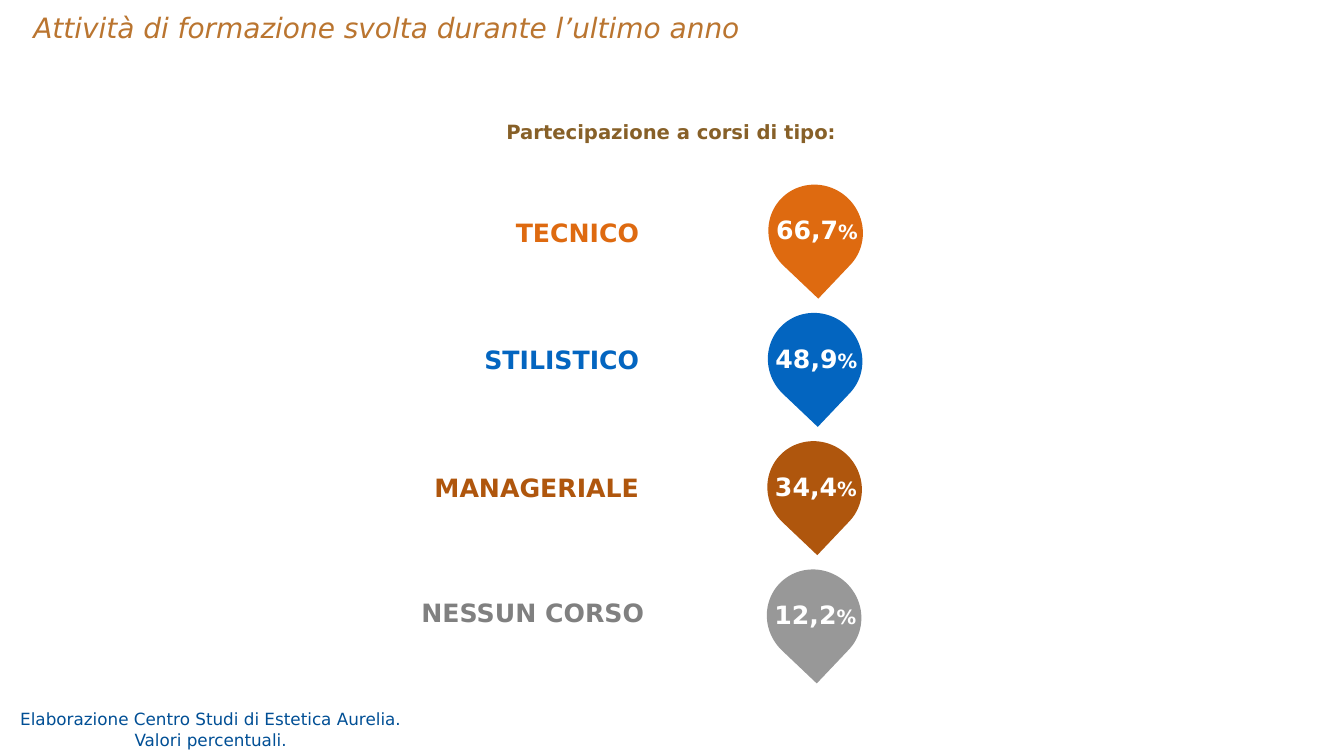
from pptx import Presentation
from pptx.dml.color import RGBColor
from pptx.enum.shapes import MSO_SHAPE
from pptx.enum.text import MSO_ANCHOR, MSO_AUTO_SIZE, PP_ALIGN
from pptx.util import Inches, Pt

THEME = {
    "font": "DejaVu Sans",
    "title": {"size": 40, "color": "BA7530", "italic": True},
    "heading": {"size": 28, "color": "876028", "bold": True},
    "label": {"size": 36, "bold": True},
    "value": {"size": 36, "color": "FFFFFF", "bold": True},
    "percent": {"size": 28, "color": "FFFFFF", "bold": True},
    "source": {"size": 24, "color": "014F95"},
}

# Grid: one row per course type, a label column and a drop column
TOP, LABEL_ROW, DROP_ROW = 4.26, 2.53, 2.545
LABEL_X, LABEL_W = 7.94, 4.84
DROP_X, DROP_W, DROP_H, DROP_RISE = 15.26, 1.85, 1.9, 0.61
VALUE_X, VALUE_W, VALUE_H = 15.14, 2.14, 0.61
DRIFT = -0.01  # sideways step of the drops from row to row

# Type, value, label colour, drop colour, label insets (side, top)
COURSES = [
    ("TECNICO", "66,7", "DE6A10", "DE6A10", (0.1, 0.05)),
    ("STILISTICO", "48,9", "0365C0", "0365C0", (0.1, 0.05)),
    ("MANAGERIALE", "34,4", "AF560D", "AF560D", (0.1, 0.05)),
    ("NESSUN CORSO", "12,2", "808080", "989898", (0, 0)),
]


def place(sp, box, inset, anchor=MSO_ANCHOR.TOP):
    """Set the box of a shape and the frame format; return its text frame."""
    for name, value in zip(("left", "top", "width", "height"), box):
        setattr(sp, name, Inches(value))
    tf = sp.text_frame
    side, top = (Inches(v) for v in inset)
    frame = {"margin_left": side, "margin_right": side, "margin_top": top,
             "margin_bottom": top, "word_wrap": True,
             "auto_size": MSO_AUTO_SIZE.NONE, "vertical_anchor": anchor}
    for name, value in frame.items():
        setattr(tf, name, value)
    return tf


def write(p, align, *runs):
    """Fill a paragraph with (text, format) runs."""
    p.alignment = align
    for text, style in runs:
        r = p.add_run()
        r.text = text
        r.font.color.rgb = RGBColor.from_string(style["color"])
        font = {"name": THEME["font"], "size": Pt(style["size"]),
                "bold": style.get("bold", False),
                "italic": style.get("italic", False)}
        for name, value in font.items():
            setattr(r.font, name, value)


prs = Presentation()
prs.slide_width, prs.slide_height = Inches(26.67), Inches(15)
s = prs.slides.add_slide(prs.slide_layouts[5])

# Title
tf = place(s.shapes.title, (0.6, 0.07, 25.44, 0.83), (0.06, 0.06), MSO_ANCHOR.MIDDLE)
p = tf.paragraphs[0]
p.line_spacing = 1.2
write(p, PP_ALIGN.LEFT,
      ("Attività di formazione svolta durante l’ultimo anno", THEME["title"]))

# Heading above the rows
tf = place(s.shapes.add_textbox(0, 0, 0, 0), (9.4, 2.33, 7.83, 0.58),
           (0.06, 0.06), MSO_ANCHOR.MIDDLE)
write(tf.paragraphs[0], PP_ALIGN.CENTER,
      ("Partecipazione a corsi di tipo:", THEME["heading"]))

# Course rows: label on the left, drop with its value on the right
for i, (course, value, label_color, drop_color, inset) in enumerate(COURSES):
    tf = place(s.shapes.add_textbox(0, 0, 0, 0),
               (LABEL_X, TOP + i * LABEL_ROW, LABEL_W, 0.71), inset)
    write(tf.paragraphs[0], PP_ALIGN.RIGHT,
          (course, {**THEME["label"], "color": label_color}))

    y, shift = TOP + i * DROP_ROW, i * DRIFT
    group = s.shapes.add_group_shape()
    drop = group.shapes.add_shape(
        MSO_SHAPE.TEAR, Inches(DROP_X + shift), Inches(y - DROP_RISE),
        Inches(DROP_W), Inches(DROP_H))
    drop.rotation = 133.5
    drop.shadow.inherit = False
    drop.fill.solid()
    drop.fill.fore_color.rgb = RGBColor.from_string(drop_color)
    drop.line.fill.background()

    box = (VALUE_X + shift, y, VALUE_W, VALUE_H)
    tf = place(group.shapes.add_textbox(*(Inches(v) for v in box)), box, (0, 0))
    write(tf.paragraphs[0], PP_ALIGN.CENTER,
          (value, THEME["value"]), ("%", THEME["percent"]))

# Source note
tf = place(s.shapes.add_textbox(0, 0, 0, 0), (-0.03, 14.01, 8.42, 0.92),
           (0.06, 0.06), MSO_ANCHOR.MIDDLE)
write(tf.paragraphs[0], PP_ALIGN.CENTER,
      ("Elaborazione Centro Studi di Estetica Aurelia.", THEME["source"]))
write(tf.add_paragraph(), PP_ALIGN.CENTER, ("Valori percentuali.", THEME["source"]))

prs.save("out.pptx")
